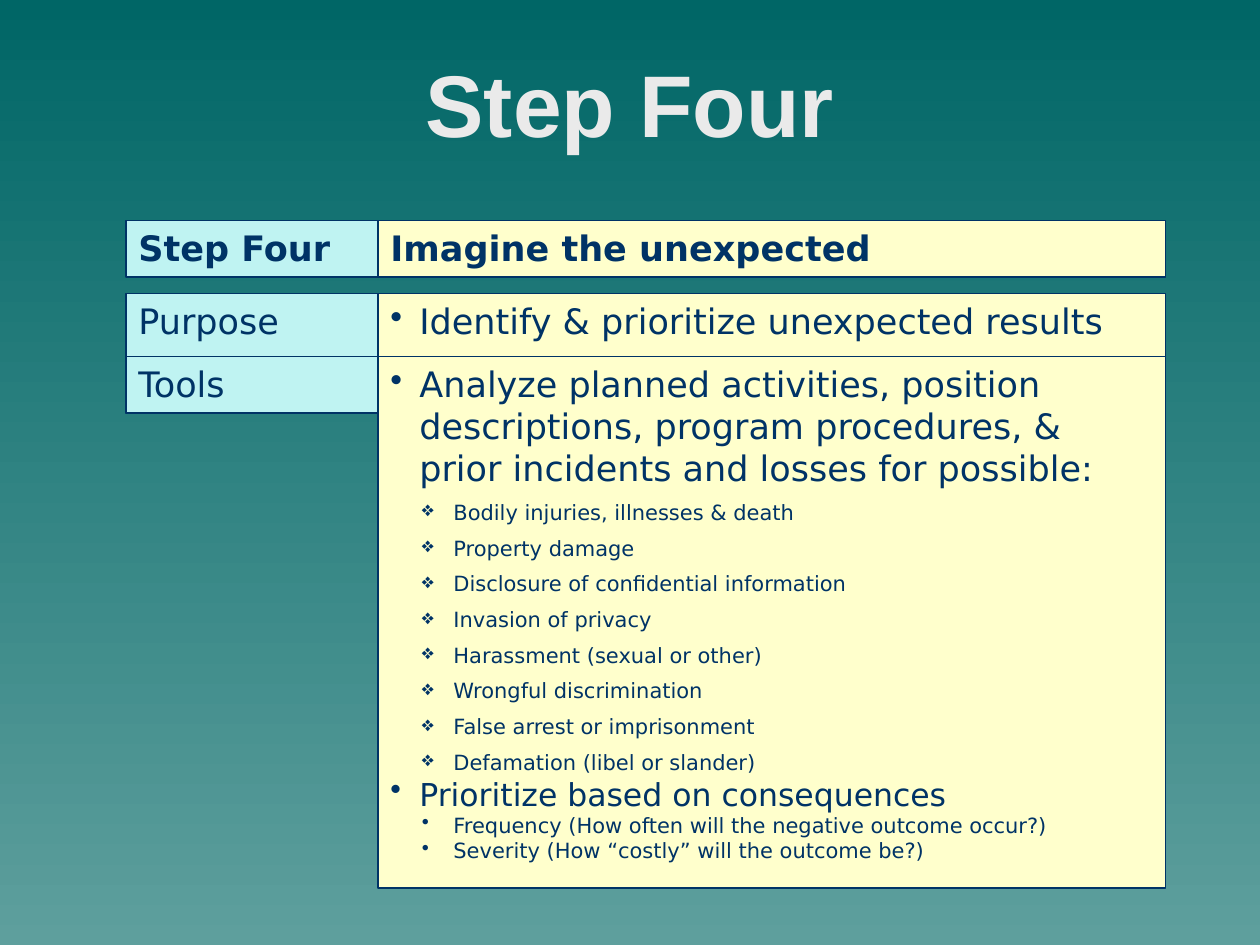
from dataclasses import dataclass

from lxml.etree import SubElement
from pptx import Presentation
from pptx.dml.color import RGBColor
from pptx.enum.shapes import MSO_SHAPE as Shape
from pptx.enum.text import MSO_ANCHOR as Anchor, MSO_AUTO_SIZE as AutoSize, PP_ALIGN as Align
from pptx.oxml.ns import qn
from pptx.util import Inches, Pt


@dataclass(frozen=True)
class Theme:
    sky_top: str = "006666"
    sky_bottom: str = "5E9F9D"
    title: str = "EAEAEA"
    ink: str = "003366"
    label: str = "BFF3F2"
    content: str = "FFFFCC"
    title_font: str = "Arial"
    body_font: str = "DejaVu Sans"
    title_size: int = 50
    body_size: int = 20
    priority_size: int = 18
    detail_size: int = 12


THEME = Theme()


def write(paragraph, text, *, size=THEME.body_size, font=THEME.body_font, color=THEME.ink,
          bold=False, align=Align.LEFT, before=0, bullet=None, margin=0.23, hanging=0.23):
    """Fill a paragraph; margin and hanging (inches) apply only with a bullet."""
    if bullet:
        properties = paragraph._p.get_or_add_pPr()
        properties.set("marL", str(Inches(margin)))
        properties.set("indent", str(-Inches(hanging)))
        SubElement(properties, qn("a:buChar"), char=bullet)
    paragraph.alignment = align
    paragraph.space_before = Pt(before)
    run = paragraph.add_run()
    run.text = text
    run.font.name = font
    run.font.size = Pt(size)
    run.font.bold = bold
    run.font.color.rgb = RGBColor.from_string(color)


def add_cell(left, top, width, height, fill):
    """Add an outlined box and return its text frame."""
    cell = slide.shapes.add_shape(Shape.RECTANGLE, Inches(left), Inches(top),
                                  Inches(width), Inches(height))
    cell.shadow.inherit = False
    cell.fill.solid()
    cell.fill.fore_color.rgb = RGBColor.from_string(fill)
    cell.line.color.rgb = RGBColor.from_string(THEME.ink)
    cell.line.width = Pt(1)
    cell.text_frame.word_wrap = True
    cell.text_frame.vertical_anchor = Anchor.TOP
    return cell.text_frame


prs = Presentation()
prs.slide_width, prs.slide_height = Inches(10), Inches(7.5)
slide = prs.slides.add_slide(prs.slide_layouts[5])

sky = slide.background.fill
sky.gradient()
sky.gradient_angle = 270
for stop, color, position in zip(sky.gradient_stops, (THEME.sky_top, THEME.sky_bottom), (0, 1)):
    stop.color.rgb = RGBColor.from_string(color)
    stop.position = position

title = slide.shapes.title
title.left, title.top, title.width, title.height = map(Inches, (0.5, 0.3, 9, 1.03))
title.text_frame.vertical_anchor = Anchor.MIDDLE
title.text_frame.auto_size = AutoSize.NONE
write(title.text_frame.paragraphs[0], "Step Four", size=THEME.title_size,
      font=THEME.title_font, color=THEME.title, bold=True, align=Align.CENTER)

main = dict(bullet="•")
detail = dict(size=THEME.detail_size, margin=0.5, hanging=0.25)
hazard = dict(detail, bullet="❖", before=6)
measure = dict(detail, bullet="•")

hazards = [
    "Bodily injuries, illnesses & death",
    "Property damage",
    "Disclosure of confidential information",
    "Invasion of privacy",
    "Harassment (sexual or other)",
    "Wrongful discrimination",
    "False arrest or imprisonment",
    "Defamation (libel or slander)",
]
tools = [
    ("Analyze planned activities, position descriptions, program procedures, "
     "& prior incidents and losses for possible:", main),
    *[(text, hazard) for text in hazards],
    ("Prioritize based on consequences", dict(main, size=THEME.priority_size)),
    ("Frequency (How often will the negative outcome occur?)", measure),
    ("Severity (How “costly” will the outcome be?)", measure),
]

# top, label height, content height, label, label format, content paragraphs
rows = [
    (1.75, 0.45, 0.45, "Step Four", dict(bold=True),
     [("Imagine the unexpected", dict(bold=True))]),
    (2.33, 0.95, 0.95, "Purpose", {}, [("Identify & prioritize unexpected results", main)]),
    (2.83, 0.45, 4.22, "Tools", {}, tools),
]
for top, label_height, content_height, label, label_format, items in rows:
    label_frame = add_cell(1, top, 2, label_height, THEME.label)
    write(label_frame.paragraphs[0], label, **label_format)
    content_frame = add_cell(3, top, 6.25, content_height, THEME.content)
    for index, (text, text_format) in enumerate(items):
        paragraph = content_frame.add_paragraph() if index else content_frame.paragraphs[0]
        write(paragraph, text, **text_format)

prs.save("out.pptx")
